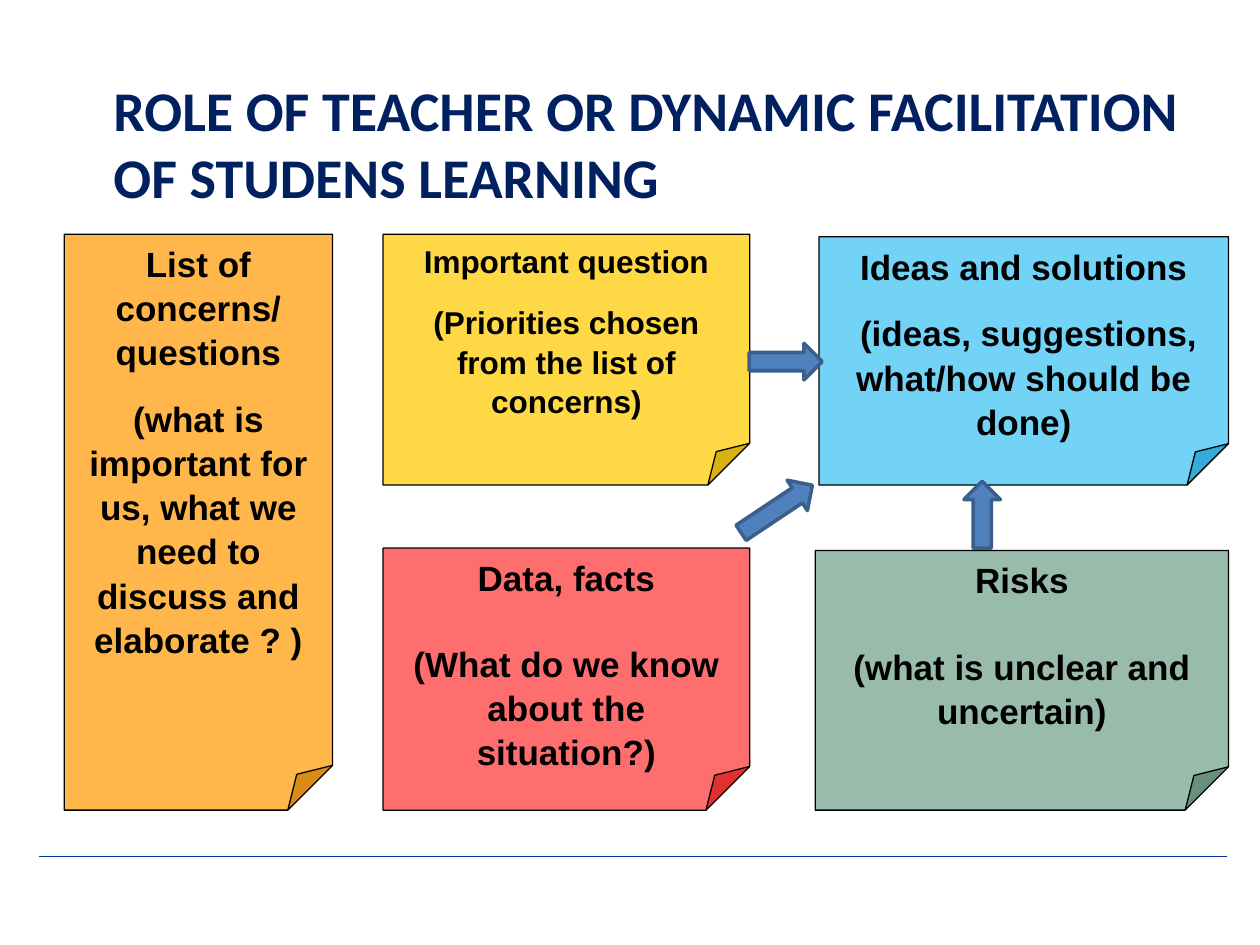
from dataclasses import dataclass

from lxml import etree
from pptx import Presentation
from pptx.dml.color import RGBColor
from pptx.enum.shapes import MSO_CONNECTOR, MSO_SHAPE
from pptx.enum.text import MSO_ANCHOR, MSO_AUTO_SIZE, PP_ALIGN
from pptx.oxml.ns import qn
from pptx.util import Inches, Pt

FOLDED_CORNER = MSO_SHAPE.FOLDED_CORNER
UP_ARROW = MSO_SHAPE.UP_ARROW
STRAIGHT = MSO_CONNECTOR.STRAIGHT
TOP = MSO_ANCHOR.TOP
LEFT, CENTER = PP_ALIGN.LEFT, PP_ALIGN.CENTER


@dataclass(frozen=True)
class Theme:
    title_font: str = "Calibri"
    note_font: str = "Arial"
    title_size: int = 32
    note_size: int = 20
    small_note_size: int = 18
    line_spacing: float = 1.05
    title: str = "002060"
    ink: str = "000000"
    rule: str = "003399"
    arrow: str = "4F81BD"
    arrow_outline: str = "3A5F8C"
    orange: str = "FF9900"
    yellow: str = "FFCC00"
    red: str = "FF0000"
    green: str = "669A82"
    blue: str = "00B0F0"


THEME = Theme()

# Box in inches, colour, opacity in percent, text size, gap after heading, paragraphs
NOTES = [
    ((0.51, 1.86, 2.13, 4.57), THEME.orange, 71, THEME.note_size, 13,
     ["List of concerns/", "questions",
      "(what is important for us, what we need to discuss and elaborate ? )"]),
    ((3.04, 1.86, 2.91, 1.99), THEME.yellow, 73, THEME.small_note_size, 12,
     ["Important question", "(Priorities chosen from the list of concerns)"]),
    ((3.04, 4.35, 2.91, 2.08), THEME.red, 57, THEME.note_size, 24,
     ["Data, facts", "(What do we know about the situation?)"]),
    ((6.47, 4.37, 3.28, 2.06), THEME.green, 67, THEME.note_size, 24,
     ["Risks", "(what is unclear and uncertain)"]),
    ((6.5, 1.88, 3.25, 1.97), THEME.blue, 55, THEME.note_size, 13,
     ["Ideas and solutions", " (ideas, suggestions, what/how should be done)"]),
]

# Box in inches before rotation, rotation in degrees
ARROWS = [
    ((6.09, 2.58, 0.29, 0.58), 90),
    ((7.65, 3.82, 0.29, 0.53), 0),
    ((6.02, 3.7, 0.29, 0.68), 56.3),
]


def color(value):
    return RGBColor.from_string(value)


def add_run(paragraph, text, font_name, size, ink):
    run = paragraph.add_run()
    run.text = text
    run.font.name = font_name
    run.font.size = Pt(size)
    run.font.bold = True
    run.font.color.rgb = color(ink)


def add_filled_shape(slide, kind, box, fill, outline, outline_width):
    shape = slide.shapes.add_shape(kind, *map(Inches, box))
    shape.shadow.inherit = False
    shape.fill.solid()
    shape.fill.fore_color.rgb = color(fill)
    shape.line.color.rgb = color(outline)
    shape.line.width = Pt(outline_width)
    return shape


def set_opacity(shape, percent):
    fill_color = shape.fill._xPr.find(qn("a:solidFill"))[0]
    etree.SubElement(fill_color, qn("a:alpha"), val=str(percent * 1000))


def add_note(slide, box, fill, opacity, size, gap, texts):
    """Add a sticky note; the gap in points precedes its last paragraph."""
    note = add_filled_shape(slide, FOLDED_CORNER, box, fill, THEME.ink, 0.75)
    set_opacity(note, opacity)
    frame = note.text_frame
    frame.word_wrap = True
    frame.vertical_anchor = TOP
    for index, text in enumerate(texts):
        paragraph = frame.add_paragraph() if index else frame.paragraphs[0]
        paragraph.alignment = CENTER
        paragraph.line_spacing = THEME.line_spacing
        add_run(paragraph, text, THEME.note_font, size, THEME.ink)
    paragraph.space_before = Pt(gap)


def add_arrow(slide, box, rotation):
    arrow = add_filled_shape(slide, UP_ARROW, box, THEME.arrow, THEME.arrow_outline, 2)
    arrow.rotation = rotation


def add_rule(slide):
    rule = slide.shapes.add_connector(
        STRAIGHT, Inches(0.31), Inches(6.8), Inches(9.74), Inches(6.8))
    rule.line.color.rgb = color(THEME.rule)
    rule.line.width = Pt(0.75)
    etree.SubElement(rule.line._ln.getparent(), qn("a:effectLst"))


def set_title(slide, text):
    title = slide.shapes.title
    title.left, title.top = Inches(0.83), Inches(0.56)
    title.width, title.height = Inches(9.17), Inches(0.53)
    frame = title.text_frame
    frame.margin_left = frame.margin_right = Inches(0.07)
    frame.margin_top = frame.margin_bottom = Inches(0.04)
    frame.word_wrap = True
    frame.auto_size = MSO_AUTO_SIZE.NONE
    frame.vertical_anchor = TOP
    paragraph = frame.paragraphs[0]
    paragraph.alignment = LEFT
    add_run(paragraph, text, THEME.title_font, THEME.title_size, THEME.title)


def main():
    presentation = Presentation()
    presentation.slide_width = Inches(10)
    presentation.slide_height = Inches(7.5)
    title_only = presentation.slide_layouts.get_by_name("Title Only")
    slide = presentation.slides.add_slide(title_only)

    add_rule(slide)
    for note in NOTES:
        add_note(slide, *note)
    set_title(slide, "ROLE OF TEACHER OR DYNAMIC FACILITATION OF STUDENS LEARNING")
    for box, rotation in ARROWS:
        add_arrow(slide, box, rotation)

    presentation.save("out.pptx")


if __name__ == "__main__":
    main()
